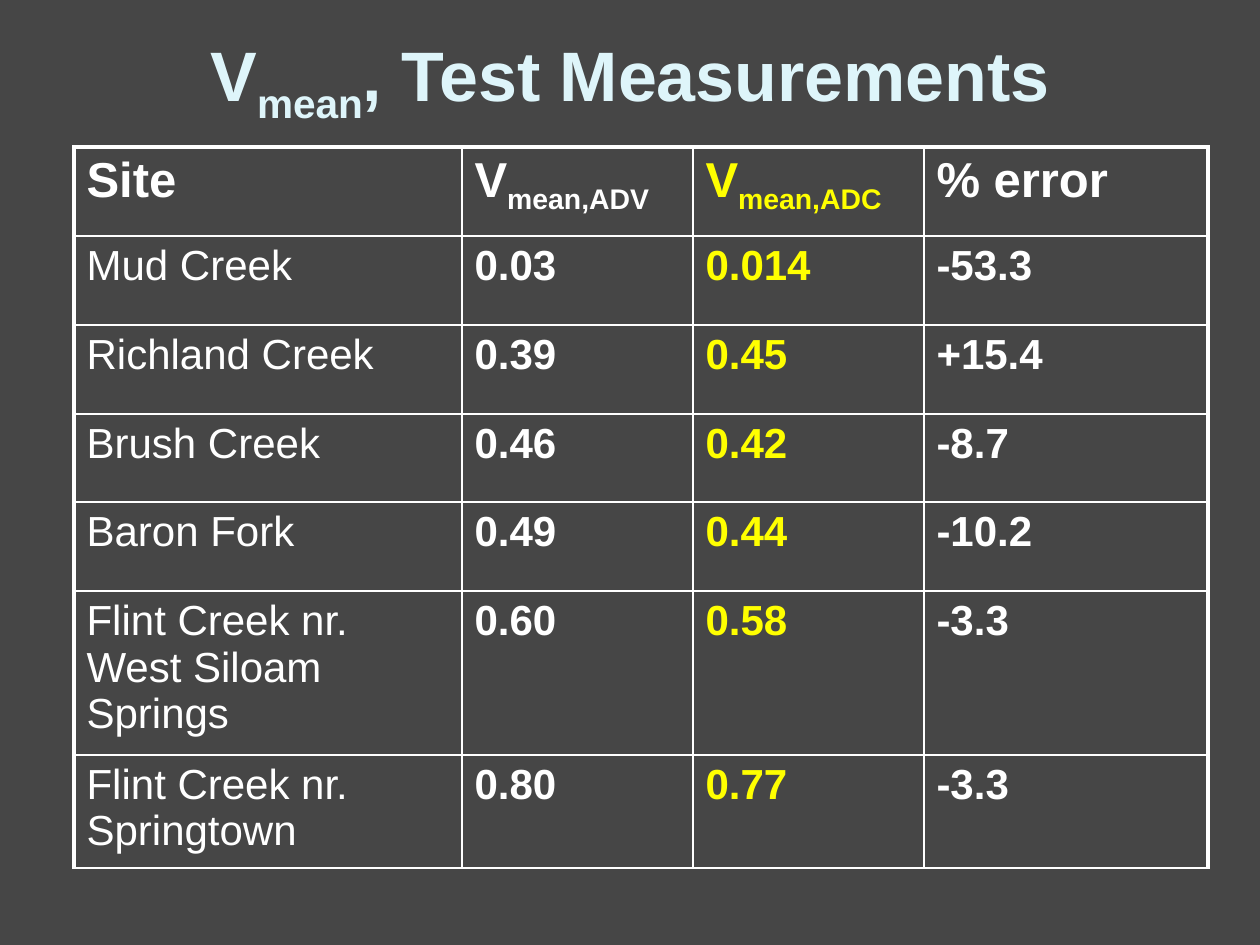
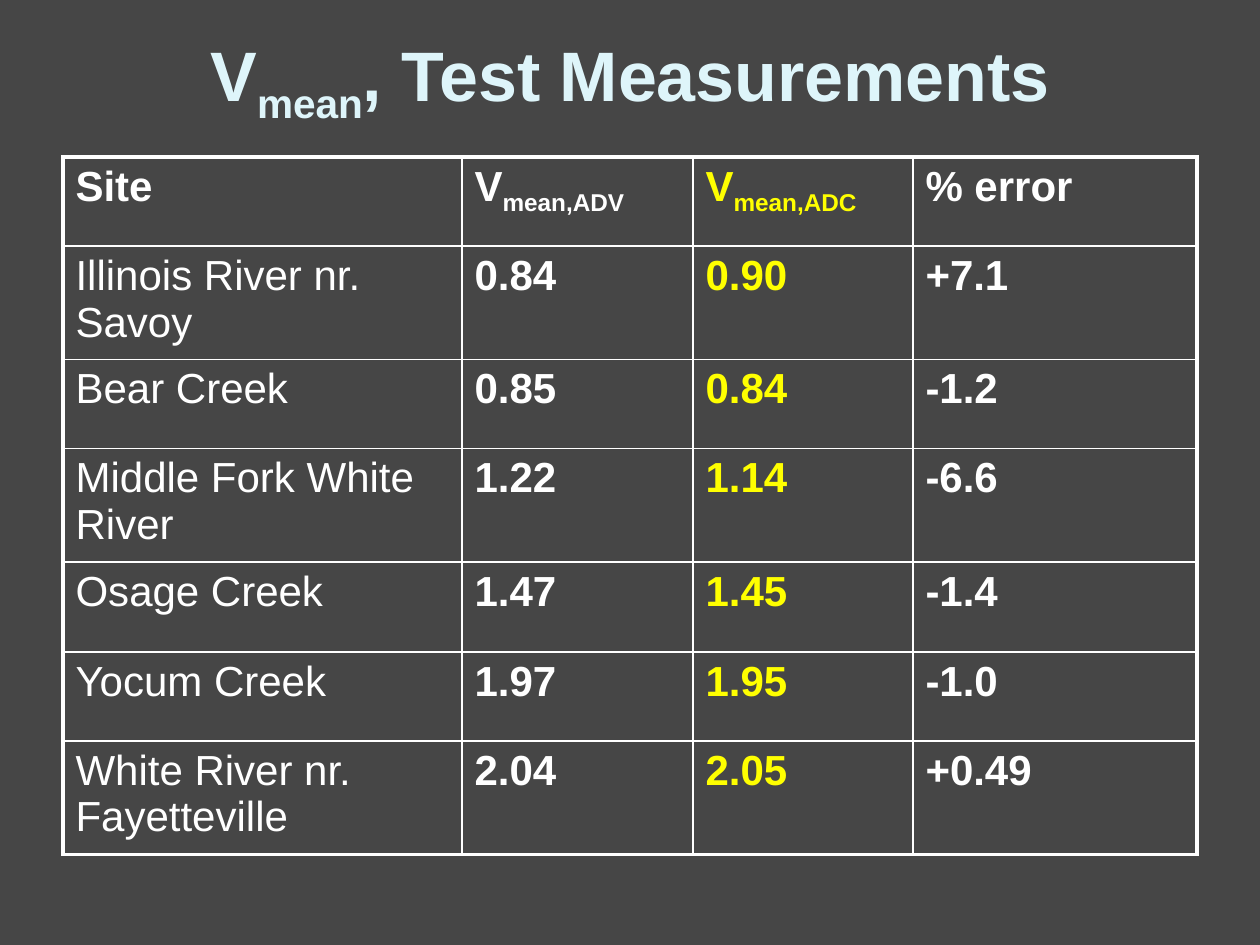
"""Build two slides that tabulate mean velocity test measurements by site."""
from dataclasses import dataclass
from itertools import pairwise
from typing import NamedTuple

import lxml.etree
import pptx
import pptx.dml.color
import pptx.enum.text
import pptx.oxml.ns
import pptx.util

PIXELS_PER_INCH = 126


@dataclass(frozen=True)
class Theme:
    font: str = "Arial"
    background: str = "464646"
    title: str = "DEF5FA"
    text: str = "FFFFFF"
    highlight: str = "FFFF00"
    border: str = "FFFFFF"
    title_size: int = 40
    body_size: int = 24
    subscript: int = -25000
    inner_border: float = 1
    outer_border: float = 2.25


THEME = Theme()


class Piece(NamedTuple):
    text: str
    subscript: bool = False


class Style(NamedTuple):
    size: int
    color: str
    bold: bool = True


class Measurement(NamedTuple):
    site: str
    adv: str
    adc: str
    error: str


@dataclass(frozen=True)
class MeasurementTable:
    column_edges: tuple[int, ...]
    row_edges: tuple[int, ...]
    header_size: int
    bottom_border: float
    measurements: tuple[Measurement, ...]


TITLE = (Piece("V"), Piece("mean", True), Piece(", Test Measurements"))
HEADER = (
    (Piece("Site"),),
    (Piece("V"), Piece("mean,ADV", True)),
    (Piece("V"), Piece("mean,ADC", True)),
    (Piece("% error"),),
)
SITE_COLUMN, ADC_COLUMN = 0, 2

TABLES = (
    MeasurementTable(
        column_edges=(74, 462, 693, 924, 1208),
        row_edges=(147, 236, 325, 414, 502, 591, 744, 851),
        header_size=28,
        bottom_border=THEME.inner_border,
        measurements=(
            Measurement("Mud Creek", "0.03", "0.014", "-53.3"),
            Measurement("Richland Creek", "0.39", "0.45", "+15.4"),
            Measurement("Brush Creek", "0.46", "0.42", "-8.7"),
            Measurement("Baron Fork", "0.49", "0.44", "-10.2"),
            Measurement("Flint Creek nr. West Siloam Springs", "0.60", "0.58", "-3.3"),
            Measurement("Flint Creek nr. Springtown", "0.80", "0.77", "-3.3"),
        ),
    ),
    MeasurementTable(
        column_edges=(63, 462, 693, 913, 1197),
        row_edges=(157, 246, 353, 442, 548, 638, 727, 832),
        header_size=24,
        bottom_border=THEME.outer_border,
        measurements=(
            Measurement("Illinois River nr. Savoy", "0.84", "0.90", "+7.1"),
            Measurement("Bear Creek", "0.85", "0.84", "-1.2"),
            Measurement("Middle Fork White River", "1.22", "1.14", "-6.6"),
            Measurement("Osage Creek", "1.47", "1.45", "-1.4"),
            Measurement("Yocum Creek", "1.97", "1.95", "-1.0"),
            Measurement("White River nr. Fayetteville", "2.04", "2.05", "+0.49"),
        ),
    ),
)


def px(length: int) -> int:
    return pptx.util.Emu(round(length * 914400 / PIXELS_PER_INCH))


def rgb(color: str) -> pptx.dml.color.RGBColor:
    return pptx.dml.color.RGBColor.from_string(color)


def add_pieces(paragraph, pieces: tuple[Piece, ...], style: Style) -> None:
    for piece in pieces:
        run = paragraph.add_run()
        run.text = piece.text
        run.font.name = THEME.font
        run.font.size = pptx.util.Pt(style.size)
        run.font.bold = style.bold
        run.font.color.rgb = rgb(style.color)
        if piece.subscript:
            run._r.get_or_add_rPr().set("baseline", str(THEME.subscript))


def add_title(slide) -> None:
    shape = slide.shapes.add_textbox(px(63), px(0), px(1134), px(158))
    frame = shape.text_frame
    frame.word_wrap = True
    frame.vertical_anchor = pptx.enum.text.MSO_ANCHOR.MIDDLE
    paragraph = frame.paragraphs[0]
    paragraph.alignment = pptx.enum.text.PP_ALIGN.CENTER
    add_pieces(paragraph, TITLE, Style(THEME.title_size, THEME.title))


def set_borders(cell, widths: dict[str, float]) -> None:
    properties = cell._tc.get_or_add_tcPr()
    qualified = pptx.oxml.ns.qn
    for side in "LRTB":
        line = lxml.etree.SubElement(properties, qualified(f"a:ln{side}"))
        line.set("w", str(pptx.util.Pt(widths[side])))
        fill = lxml.etree.SubElement(line, qualified("a:solidFill"))
        lxml.etree.SubElement(fill, qualified("a:srgbClr")).set("val", THEME.border)


def cell_style(row: int, column: int, header_size: int) -> Style:
    return Style(
        size=header_size if row == 0 else THEME.body_size,
        color=THEME.highlight if column == ADC_COLUMN else THEME.text,
        bold=row == 0 or column != SITE_COLUMN,
    )


def add_measurement_table(slide, content: MeasurementTable) -> None:
    columns, rows = content.column_edges, content.row_edges
    last_column, last_row = len(columns) - 2, len(rows) - 2
    table = slide.shapes.add_table(
        last_row + 1, last_column + 1, px(columns[0]), px(rows[0]),
        px(columns[-1] - columns[0]), px(rows[-1] - rows[0]),
    ).table
    table.first_row = table.horz_banding = False
    for column, (left, right) in zip(table.columns, pairwise(columns)):
        column.width = px(right - left)
    for row, (top, bottom) in zip(table.rows, pairwise(rows)):
        row.height = px(bottom - top)

    inner, outer = THEME.inner_border, THEME.outer_border
    body = [tuple((Piece(value),) for value in item) for item in content.measurements]
    for row_index, values in enumerate([HEADER, *body]):
        for column_index, pieces in enumerate(values):
            cell = table.cell(row_index, column_index)
            set_borders(cell, {
                "L": outer if column_index == 0 else inner,
                "R": outer if column_index == last_column else inner,
                "T": outer if row_index == 0 else inner,
                "B": content.bottom_border if row_index == last_row else inner,
            })
            cell.fill.background()
            style = cell_style(row_index, column_index, content.header_size)
            add_pieces(cell.text_frame.paragraphs[0], pieces, style)


def main() -> None:
    presentation = pptx.Presentation()
    presentation.slide_width, presentation.slide_height = px(1260), px(945)
    for content in TABLES:
        slide = presentation.slides.add_slide(presentation.slide_layouts[6])
        slide.background.fill.solid()
        slide.background.fill.fore_color.rgb = rgb(THEME.background)
        add_title(slide)
        add_measurement_table(slide, content)
    presentation.save("out.pptx")


if __name__ == "__main__":
    main()
